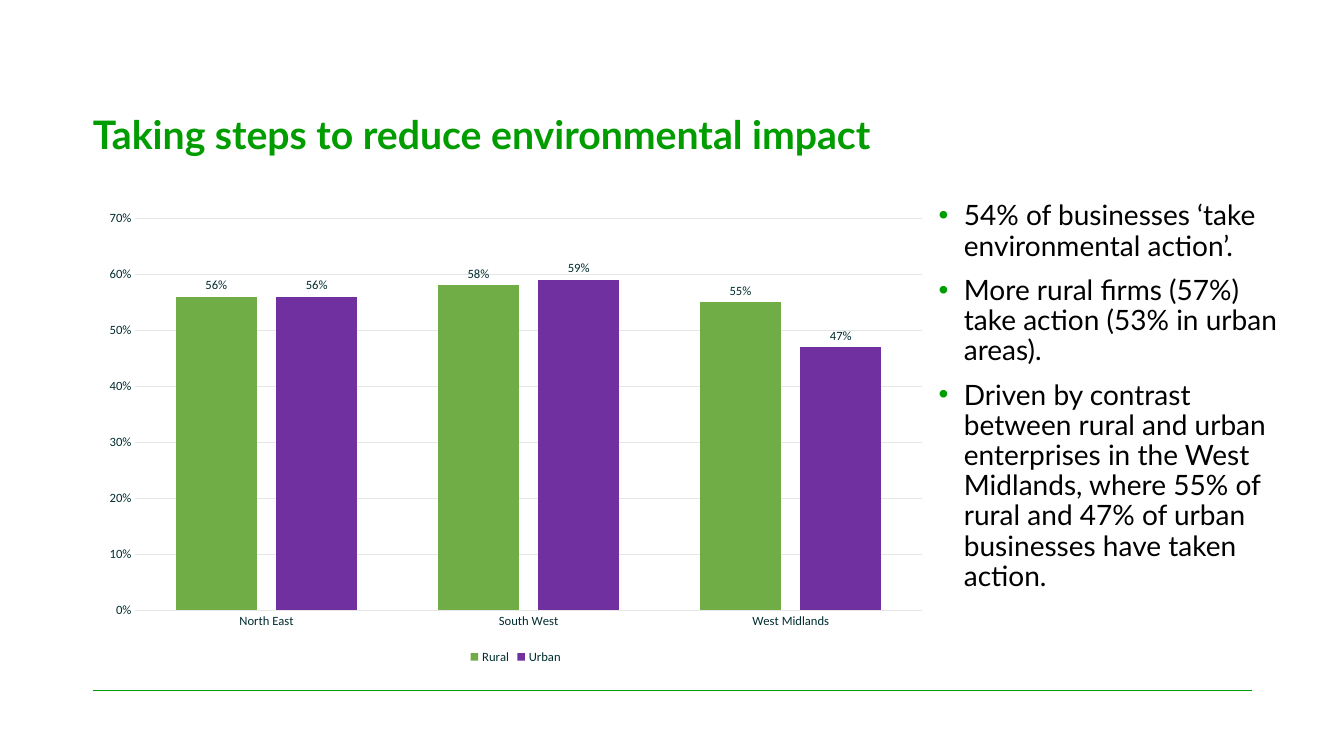
"""Build the slide on steps businesses take to reduce environmental impact."""
from dataclasses import dataclass

from lxml import etree
from pptx import Presentation
from pptx import util as u
from pptx.chart import data as chart_data
from pptx.dml import color
from pptx.enum import chart as ch, shapes, text
from pptx.oxml import ns


@dataclass(frozen=True)
class Theme:
    accent: str = "009C00"
    body_color: str = "000000"
    chart_color: str = "002C30"
    grid: str = "E6E6E6"
    rural: str = "70AD47"
    urban: str = "7030A0"
    text_font: str = "Lato"
    chart_font: str = "Calibri"
    title_size: int = 28
    body_size: int = 20
    chart_size: int = 9


def rgb(value):
    return color.RGBColor.from_string(value)


class SlideBuilder:
    def __init__(self, slide, theme):
        self.slide = slide
        self.theme = theme

    def style_font(self, font, name, size, tint, bold=False):
        font.name, font.size, font.bold = name, u.Pt(size), bold
        font.color.rgb = rgb(tint)

    def style_line(self, line, tint, width):
        line.color.rgb = rgb(tint)
        line.width = u.Pt(width)

    def place(self, holder, box, anchor):
        holder.left, holder.top, holder.width, holder.height = map(u.Inches, box)
        frame = holder.text_frame
        frame.margin_left = frame.margin_right = 0
        frame.margin_top = frame.margin_bottom = 0
        frame.word_wrap = True
        frame.auto_size = text.MSO_AUTO_SIZE.NONE
        frame.vertical_anchor = anchor
        return frame

    def title(self, wording, box):
        frame = self.place(self.slide.shapes.title, box, text.MSO_ANCHOR.BOTTOM)
        frame.text = wording
        heading = frame.paragraphs[0]
        heading.alignment = text.PP_ALIGN.LEFT
        heading.line_spacing = 0.9
        self.style_font(heading.runs[0].font, self.theme.text_font,
                        self.theme.title_size, self.theme.accent, True)

    def bullets(self, findings, box):
        frame = self.place(self.slide.placeholders[1], box, text.MSO_ANCHOR.TOP)
        frame.text = "\n".join(findings)
        for index, finding in enumerate(frame.paragraphs):
            finding.line_spacing = 0.9
            finding.space_before = u.Pt(10 if index else 0)
            props = finding._p.get_or_add_pPr()
            props.set("marL", str(u.Inches(0.25)))
            props.set("indent", str(u.Inches(-0.25)))
            tint = etree.SubElement(props, ns.qn("a:buClr"))
            etree.SubElement(tint, ns.qn("a:srgbClr"), val=self.theme.accent)
            etree.SubElement(props, ns.qn("a:buFont"), typeface="Arial")
            etree.SubElement(props, ns.qn("a:buChar"), char="•")
            self.style_font(finding.runs[0].font, self.theme.text_font,
                            self.theme.body_size, self.theme.body_color)

    def rule(self, left, right, top):
        footer_rule = self.slide.shapes.add_connector(
            shapes.MSO_CONNECTOR.STRAIGHT,
            u.Inches(left), u.Inches(top), u.Inches(right), u.Inches(top))
        self.style_line(footer_rule.line, self.theme.accent, 1)
        etree.SubElement(footer_rule._element.spPr, ns.qn("a:effectLst"))

    def columns(self, regions, shares, box):
        theme = self.theme
        figures = chart_data.CategoryChartData(number_format="0%")
        figures.categories = regions
        for area, (values, _) in shares.items():
            figures.add_series(area, values)
        chart = self.slide.shapes.add_chart(
            ch.XL_CHART_TYPE.COLUMN_CLUSTERED, *map(u.Inches, box), figures).chart
        chart.has_title = False
        chart.has_legend = True
        chart.legend.position = ch.XL_LEGEND_POSITION.BOTTOM
        chart.legend.include_in_layout = False

        regions_axis, share_axis = chart.category_axis, chart.value_axis
        for axis in (regions_axis, share_axis):
            axis.major_tick_mark = axis.minor_tick_mark = ch.XL_TICK_MARK.NONE
        self.style_line(regions_axis.format.line, theme.grid, 0.75)
        share_axis.format.line.fill.background()
        share_axis.minimum_scale, share_axis.maximum_scale = 0, 0.7
        share_axis.major_unit = 0.1
        share_axis.tick_labels.number_format = "0%"
        share_axis.tick_labels.number_format_is_linked = False
        self.style_line(share_axis.major_gridlines.format.line, theme.grid, 0.75)

        plot = chart.plots[0]
        plot.gap_width, plot.overlap = 100, -24
        plot.vary_by_categories = False
        plot.has_data_labels = True
        labels = plot.data_labels
        labels.show_value = True
        labels.number_format, labels.number_format_is_linked = "0%", False
        labels.position = ch.XL_LABEL_POSITION.OUTSIDE_END
        for series, (_, tint) in zip(plot.series, shares.values()):
            series.format.fill.solid()
            series.format.fill.fore_color.rgb = rgb(tint)
        for part in (chart, chart.legend, regions_axis.tick_labels,
                     share_axis.tick_labels, labels):
            self.style_font(part.font, theme.chart_font,
                            theme.chart_size, theme.chart_color)


def main():
    theme = Theme()
    deck = Presentation()
    deck.slide_width, deck.slide_height = u.Inches(13.33), u.Inches(7.5)
    builder = SlideBuilder(deck.slides.add_slide(deck.slide_layouts[1]), theme)
    builder.rule(0.92, 12.42, 6.85)
    builder.title("Taking steps to reduce environmental impact",
                  (0.92, 0.89, 11.5, 0.68))
    builder.bullets([
        "54% of businesses ‘take environmental action’.",
        "More rural firms (57%) take action (53% in urban areas).",
        "Driven by contrast between rural and urban enterprises in the West "
        "Midlands, where 55% of rural and 47% of urban businesses have taken "
        "action.",
    ], (9.31, 2, 3.57, 4.28))
    builder.columns(
        ["North East", "South West", "West Midlands"],
        {"Rural": ((0.56, 0.58, 0.55), theme.rural),
         "Urban": ((0.56, 0.59, 0.47), theme.urban)},
        (0.92, 2, 8.39, 4.63))
    deck.save("out.pptx")


if __name__ == "__main__":
    main()
